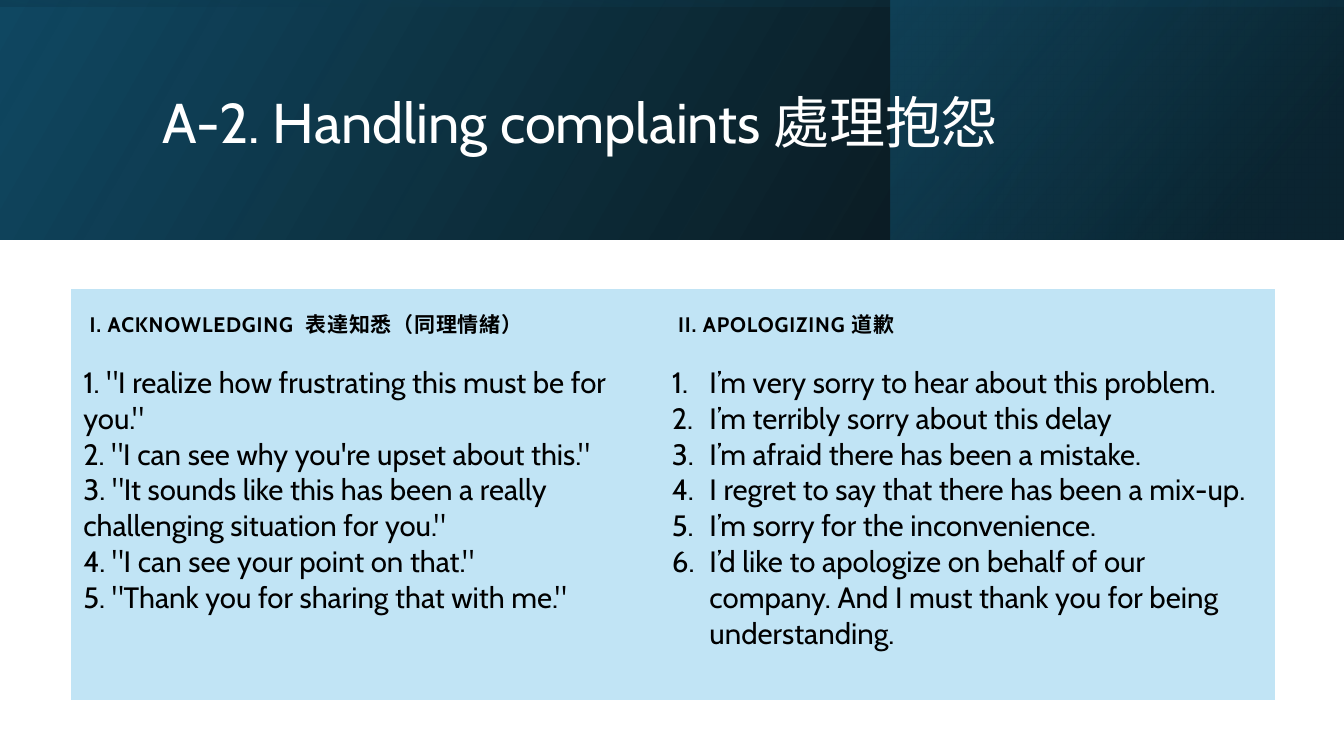
from lxml import etree
from pptx import Presentation
from pptx.dml.color import RGBColor
from pptx.enum import shapes, text
from pptx.oxml.ns import qn
from pptx.util import Cm, Pt

FONT = "Cabin"
PALE_BLUE = "C1E4F5"
PLAIN_TABLE = "{2D5ABB26-0587-4C30-8999-92F81FD0307C}"

HEADINGS = ["I. ACKNOWLEDGING  表達知悉（同理情緒）", "II. APOLOGIZING 道歉"]
ACKNOWLEDGING = [
    '1. "I realize how frustrating this must be for you."',
    '2. "I can see why you\'re upset about this."',
    '3. "It sounds like this has been a really challenging situation for you."',
    '4. "I can see your point on that."',
    '5. "Thank you for sharing that with me."',
]
APOLOGIZING = [
    "I’m very sorry to hear about this problem.",
    "I’m terribly sorry about this delay",
    "I’m afraid there has been a mistake.",
    "I regret to say that there has been a mix-up.",
    "I’m sorry for the inconvenience.",
    "I’d like to apologize on behalf of our company. "
    "And I must thank you for being understanding.",
]


def color(hex_code):
    return RGBColor.from_string(hex_code)


def add_band(slide, box, stops, angle, rotation=0):
    """Add a mirrored gradient rectangle; stops are (position, colour, opacity %)."""
    sp = slide.shapes.add_shape(shapes.MSO_SHAPE.RECTANGLE, *map(Cm, box))
    sp.shadow.inherit = False
    sp.line.fill.background()
    sp.rotation = rotation
    sp._element.spPr.find(qn("a:xfrm")).set("flipH", "1")
    sp.fill.gradient()
    sp.fill.gradient_angle = 360 - angle
    for stop, (position, hex_code, opacity) in zip(sp.fill.gradient_stops, stops):
        stop.position = position
        stop.color.rgb = color(hex_code)
    for clr, (_, _, opacity) in zip(sp._element.spPr.iter(qn("a:srgbClr")), stops):
        etree.SubElement(clr, qn("a:alpha")).set("val", str(opacity * 1000))


def add_run(p, words, size, hex_code="000000", bold=False):
    r = p.add_run()
    r.text = words
    r.font.name = FONT
    r.font.size = Pt(size)
    r.font.bold = bold
    r.font.color.rgb = color(hex_code)
    return r


def set_title(slide, words):
    title = slide.shapes.title
    slide.shapes._spTree.append(title._element)  # in front of the bands
    title.left, title.top, title.width, title.height = map(Cm, (3.84, 0.97, 27, 4.37))
    tf = title.text_frame
    tf.auto_size = text.MSO_AUTO_SIZE.NONE
    tf.vertical_anchor = text.MSO_ANCHOR.MIDDLE
    p = tf.paragraphs[0]
    p.alignment = text.PP_ALIGN.LEFT
    p.line_spacing = 0.9
    add_run(p, words, 40, "FFFFFF")


def number(p):
    """Give the paragraph an automatic number with a hanging indent."""
    pPr = p._p.get_or_add_pPr()
    pPr.set("marL", str(Cm(0.95)))
    pPr.set("indent", str(-Cm(0.95)))
    etree.SubElement(pPr, qn("a:buFont")).set("typeface", FONT)
    etree.SubElement(pPr, qn("a:buAutoNum")).set("type", "arabicPeriod")


def format_cell(cell, margins):
    cell.fill.solid()
    cell.fill.fore_color.rgb = color(PALE_BLUE)
    (cell.margin_left, cell.margin_top,
     cell.margin_right, cell.margin_bottom) = map(Cm, margins)


def fill_heading(cell, words):
    format_cell(cell, (0.48, 0.48, 0.48, 0.48))
    r = add_run(cell.text_frame.paragraphs[0], words, 15, bold=True)
    r.font._element.set("spc", "60")


def fill_phrases(cell, phrases, numbered):
    format_cell(cell, (0.32, 0.16, 0.32, 0.32))
    tf = cell.text_frame
    for i, phrase in enumerate(phrases):
        p = tf.add_paragraph() if i else tf.paragraphs[0]
        if numbered:
            number(p)
        add_run(p, phrase, 21)


def add_phrase_table(slide):
    widths, heights = (14.83, 15.52), (1.75, 8.61)
    frame = slide.shapes.add_table(2, 2, Cm(1.78), Cm(7.29),
                                   Cm(sum(widths)), Cm(sum(heights)))
    table = frame.table
    table.first_row = table.horz_banding = False
    table._tbl.tblPr.find(qn("a:tableStyleId")).text = PLAIN_TABLE
    for column, width in zip(table.columns, widths):
        column.width = Cm(width)
    for row, height in zip(table.rows, heights):
        row.height = Cm(height)
    for i, heading in enumerate(HEADINGS):
        fill_heading(table.cell(0, i), heading)
    fill_phrases(table.cell(1, 0), ACKNOWLEDGING, numbered=False)
    fill_phrases(table.cell(1, 1), APOLOGIZING, numbered=True)


def main():
    prs = Presentation()
    prs.slide_width, prs.slide_height = Cm(33.87), Cm(19.05)
    slide = prs.slides.add_slide(prs.slide_layouts[5])
    add_band(slide, (0, 0, 33.87, 6.03),
             [(0, "000000", 96), (1, "104862", 100)], 330)
    add_band(slide, (22.45, 0, 11.4, 6.03),
             [(0.19, "0B3041", 68), (1, "156082", 48)], 320)
    add_band(slide, (13.92, -13.92, 6.03, 33.87),
             [(0.23, "104862", 16), (0.99, "000000", 45)], 350, rotation=270)
    set_title(slide, "A-2. Handling complaints 處理抱怨")
    add_phrase_table(slide)
    prs.save("out.pptx")


if __name__ == "__main__":
    main()
